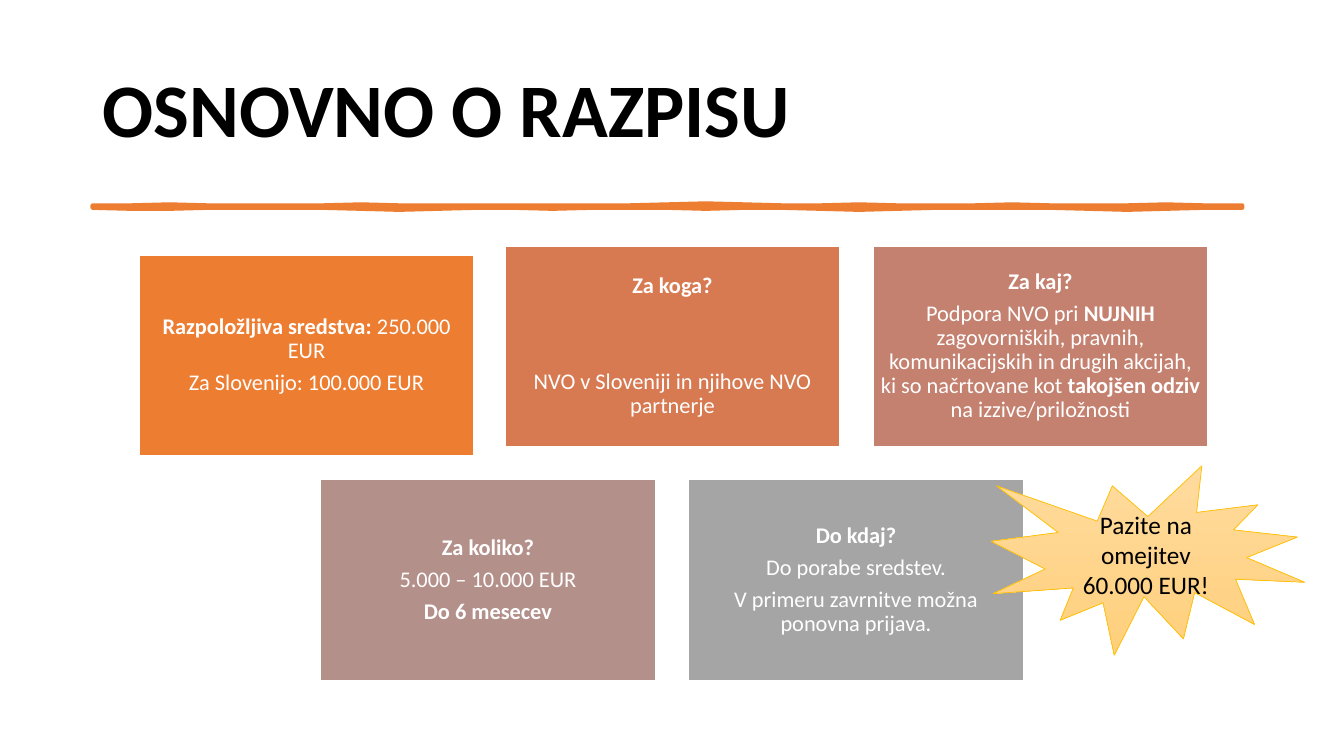
import pptx
import pptx.dml.color
import pptx.enum.shapes
import pptx.enum.text
import pptx.util

Inches = pptx.util.Inches
Pt = pptx.util.Pt
MSO_SHAPE = pptx.enum.shapes.MSO_SHAPE
PP_ALIGN = pptx.enum.text.PP_ALIGN

COLORS = {
    "black": "000000",
    "white": "FFFFFF",
    "orange": "ED7D31",
    "terracotta": "D87A51",
    "rose": "C48170",
    "mauve": "B4908B",
    "gray": "A5A5A5",
    "gold": "FFC000",
    "burst top": "FFDB9E",
    "burst bottom": "FFD07C",
}


def rgb(name):
    return pptx.dml.color.RGBColor.from_string(COLORS[name])


def write_text(shape, text, size=16, color="white", align=PP_ALIGN.CENTER,
               spacing=0.9, after=0, first_after=None, inset=None):
    frame = shape.text_frame
    frame.word_wrap = True
    frame.vertical_anchor = pptx.enum.text.MSO_ANCHOR.MIDDLE
    if inset is not None:
        frame.margin_left = frame.margin_right = Inches(inset)
        frame.margin_top = frame.margin_bottom = Inches(inset)
    for index, line in enumerate(text.split("\n")):
        paragraph = frame.paragraphs[0] if index == 0 else frame.add_paragraph()
        paragraph.alignment = align
        paragraph.line_spacing = spacing
        paragraph.space_after = Pt(after)
        if index == 0 and first_after is not None:
            paragraph.space_after = Pt(first_after)
        for position, part in enumerate(line.split("**")):
            if part:
                run = paragraph.add_run()
                run.text = part
                run.font.name = "Calibri"
                run.font.size = Pt(size)
                run.font.bold = position % 2 == 1
                run.font.color.rgb = rgb(color)


presentation = pptx.Presentation()
presentation.slide_width = Inches(13.33)
presentation.slide_height = Inches(7.5)
slide = presentation.slides.add_slide(presentation.slide_layouts[6])

title = slide.shapes.add_textbox(Inches(0.92), Inches(0.4), Inches(11.5), Inches(1.45))
write_text(title, "**OSNOVNO O RAZPISU**", size=54, color="black", align=PP_ALIGN.LEFT)

rule_left, rule_step = 0.92, 0.38
top_edge = [2.04, 2.04, 2.03, 2.04, 2.04, 2.04, 2.04, 2.03, 2.04, 2.04, 2.04,
            2.04, 2.04, 2.04, 2.04, 2.03, 2.02, 2.03, 2.04, 2.04, 2.03, 2.04,
            2.04, 2.04, 2.03, 2.04, 2.04, 2.04, 2.03, 2.04, 2.04]
bottom_edge = [2.06, 2.07, 2.07, 2.06, 2.06, 2.06, 2.06, 2.07, 2.08, 2.07, 2.06,
               2.06, 2.07, 2.06, 2.06, 2.06, 2.07, 2.06, 2.06, 2.07, 2.08, 2.07,
               2.06, 2.06, 2.06, 2.06, 2.07, 2.08, 2.07, 2.06, 2.06]
upper = [(Inches(rule_left + i * rule_step), Inches(y)) for i, y in enumerate(top_edge)]
lower = [(Inches(rule_left + i * rule_step), Inches(y)) for i, y in enumerate(bottom_edge)]
builder = slide.shapes.build_freeform(*upper[0], scale=1.0)
builder.add_line_segments(upper[1:] + lower[::-1], close=True)
rule = builder.convert_to_shape()
rule.shadow.inherit = False
rule.fill.solid()
rule.fill.fore_color.rgb = rgb("orange")
rule.line.color.rgb = rgb("orange")
rule.line.width = Pt(3.25)

cards = [
    (1.38, 2.53, "orange", None,
     "**Razpoložljiva sredstva: **250.000 EUR\nZa Slovenijo: 100.000 EUR"),
    (5.01, 2.44, "terracotta", 51,
     "**Za koga?**\nNVO v Sloveniji in njihove NVO partnerje"),
    (8.66, 2.44, "rose", None,
     "**Za kaj?**\nPodpora NVO pri **NUJNIH **zagovorniških, pravnih, "
     "komunikacijskih in drugih akcijah, ki so načrtovane kot "
     "**takojšen odziv **na izzive/priložnosti"),
    (3.18, 4.76, "mauve", None,
     "**Za koliko?**\n5.000 – 10.000 EUR\n**Do 6 mesecev**"),
    (6.83, 4.76, "gray", None,
     "**Do kdaj?**\nDo porabe sredstev.\nV primeru zavrnitve možna ponovna prijava."),
]
for left, top, color, first_after, text in cards:
    card = slide.shapes.add_shape(MSO_SHAPE.RECTANGLE, Inches(left), Inches(top),
                                  Inches(3.32), Inches(1.99))
    card.shadow.inherit = False
    card.fill.solid()
    card.fill.fore_color.rgb = rgb(color)
    card.line.color.rgb = rgb("white")
    card.line.width = Pt(1)
    write_text(card, text, after=5.6, first_after=first_after, inset=0.07)

burst = slide.shapes.add_shape(MSO_SHAPE.EXPLOSION1, Inches(9.83), Inches(4.62),
                               Inches(3.11), Inches(1.88))
burst.shadow.inherit = False
burst.fill.gradient()
burst.fill.gradient_angle = 270
for stop, color in zip(burst.fill.gradient_stops, ["burst top", "burst bottom"]):
    stop.color.rgb = rgb(color)
burst.line.color.rgb = rgb("gold")
burst.line.width = Pt(0.5)
write_text(burst, "Pazite na omejitev 60.000 EUR!", size=18, color="black", spacing=1.0)

presentation.save("out.pptx")
